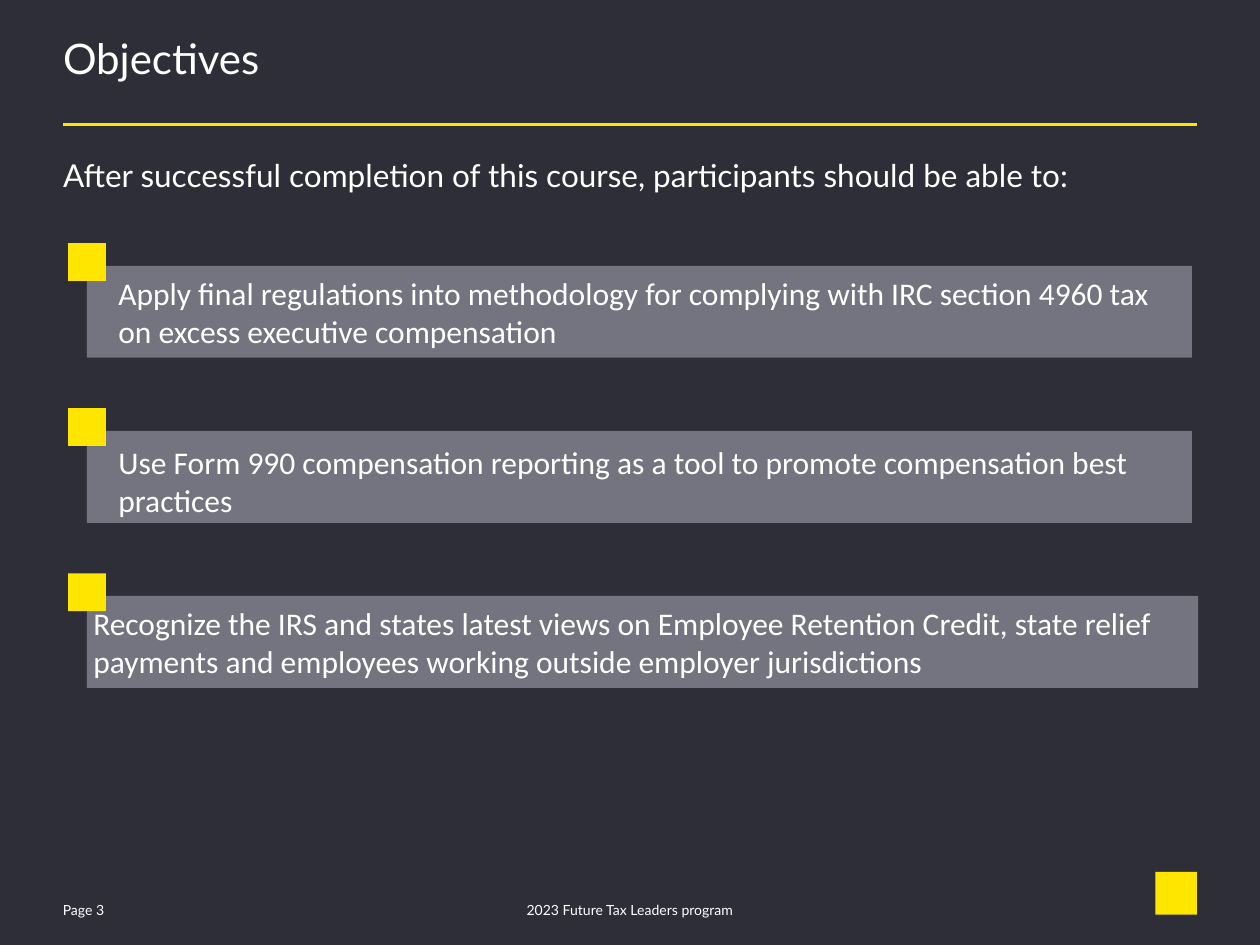
from pptx import Presentation
from pptx.dml.color import RGBColor
from pptx.enum.shapes import MSO_CONNECTOR as CONN, MSO_SHAPE as SHAPE
from pptx.enum.text import MSO_ANCHOR as ANCHOR, MSO_AUTO_SIZE as AUTO, PP_ALIGN as ALIGN
from pptx.oxml.ns import qn
from pptx.util import Inches, Pt
from lxml import etree

# Content
TITLE = "Objectives"
INTRO = "After successful completion of this course, participants should be able to:"
# text, left indent, bar width, downward shift of the text
OBJECTIVES = [
    ("Apply final regulations into methodology for complying with IRC section 4960 tax "
     "on excess executive compensation", 0.2, 8.77, 0),
    ("Use Form 990 compensation reporting as a tool to promote compensation best practices",
     0.2, 8.77, 0.03),
    ("Recognize the IRS and states latest views on Employee Retention Credit, state relief "
     "payments and employees working outside employer jurisdictions", 0, 8.82, 0),
]
# text, left, width, alignment
FOOTERS = [
    ("2023 Future Tax Leaders program", 3.31, 3.38, ALIGN.CENTER),
    ("Page 3", 0.4, 0.73, ALIGN.LEFT),
]
COLORS = {"back": "2E2E38", "bar": "747480", "accent": "FFE600", "text": "FFFFFF"}

# Grid, in inches
WIDTH, HEIGHT, MARGIN = 10, 7.5, 0.5
CONTENT_W = WIDTH - 2 * MARGIN
BAR_X, BAR_Y, BAR_H, PITCH = 0.69, 2.11, 0.73, 1.31
MARK, MARK_DX, MARK_DY = 0.3, -0.15, -0.18
PAD = 0.05


def rgb(name):
    return RGBColor.from_string(COLORS[name])


def place(sp, x, y, w, h):
    sp.left, sp.top, sp.width, sp.height = (Inches(v) for v in (x, y, w, h))


def write(sp, text, font="Lato", size=18, align=ALIGN.LEFT, anchor=ANCHOR.TOP,
          insets=(0, 0, 0, 0), indent=0, spacing=None):
    tf = sp.text_frame
    tf.word_wrap, tf.auto_size, tf.vertical_anchor = True, AUTO.NONE, anchor
    tf.margin_left, tf.margin_top, tf.margin_right, tf.margin_bottom = map(Inches, insets)
    p = tf.paragraphs[0]
    p.alignment, p.space_before = align, Pt(0)
    if spacing:
        p.line_spacing = spacing
    pPr = p._p.get_or_add_pPr()
    pPr.set("marL", str(Inches(indent)))
    pPr.set("indent", "0")
    etree.SubElement(pPr, qn("a:buNone"))
    r = p.add_run()
    r.text = text
    r.font.name, r.font.size, r.font.color.rgb = font, Pt(size), rgb("text")


def add_block(s, x, y, w, h, color):
    sp = s.shapes.add_shape(SHAPE.RECTANGLE, *map(Inches, (x, y, w, h)))
    sp.shadow.inherit = False
    sp.fill.solid()
    sp.fill.fore_color.rgb = rgb(color)
    sp.line.fill.background()
    return sp


prs = Presentation()
prs.slide_width, prs.slide_height = Inches(WIDTH), Inches(HEIGHT)
s = prs.slides.add_slide(prs.slide_layouts[1])
s.background.fill.solid()
s.background.fill.fore_color.rgb = rgb("back")

# Title and introduction
title, body = s.placeholders
place(title, MARGIN, 0.32, CONTENT_W, 0.65)
write(title, TITLE, size=24, spacing=0.85)
place(body, MARGIN, 1.24, CONTENT_W, 5.41)
write(body, INTRO)

# Rule under the title
rule = s.shapes.add_connector(CONN.STRAIGHT, Inches(MARGIN), Inches(0.99),
                              Inches(WIDTH - MARGIN), Inches(0.99))
rule.line.color.rgb, rule.line.width = rgb("accent"), Pt(1.5)
etree.SubElement(rule._element.spPr, qn("a:effectLst"))

# Objective bars with their corner markers
for i, (text, indent, width, shift) in enumerate(OBJECTIVES):
    y = BAR_Y + i * PITCH
    bar = add_block(s, BAR_X, y, width, BAR_H, "bar")
    write(bar, text, font="Calibri", anchor=ANCHOR.MIDDLE, indent=indent,
          insets=(PAD, PAD + shift, PAD, PAD - shift))
    add_block(s, BAR_X + MARK_DX, y + MARK_DY, MARK, MARK, "accent")

# Footer, with a plain block in the corner
for text, x, width, align in FOOTERS:
    box = s.shapes.add_textbox(*map(Inches, (x, 7.12, width, 0.2)))
    write(box, text, size=8, align=align, anchor=ANCHOR.MIDDLE, insets=(0.1, 0, 0.1, 0))
add_block(s, 9.17, 6.92, 0.33, 0.34, "accent")

prs.save("out.pptx")
